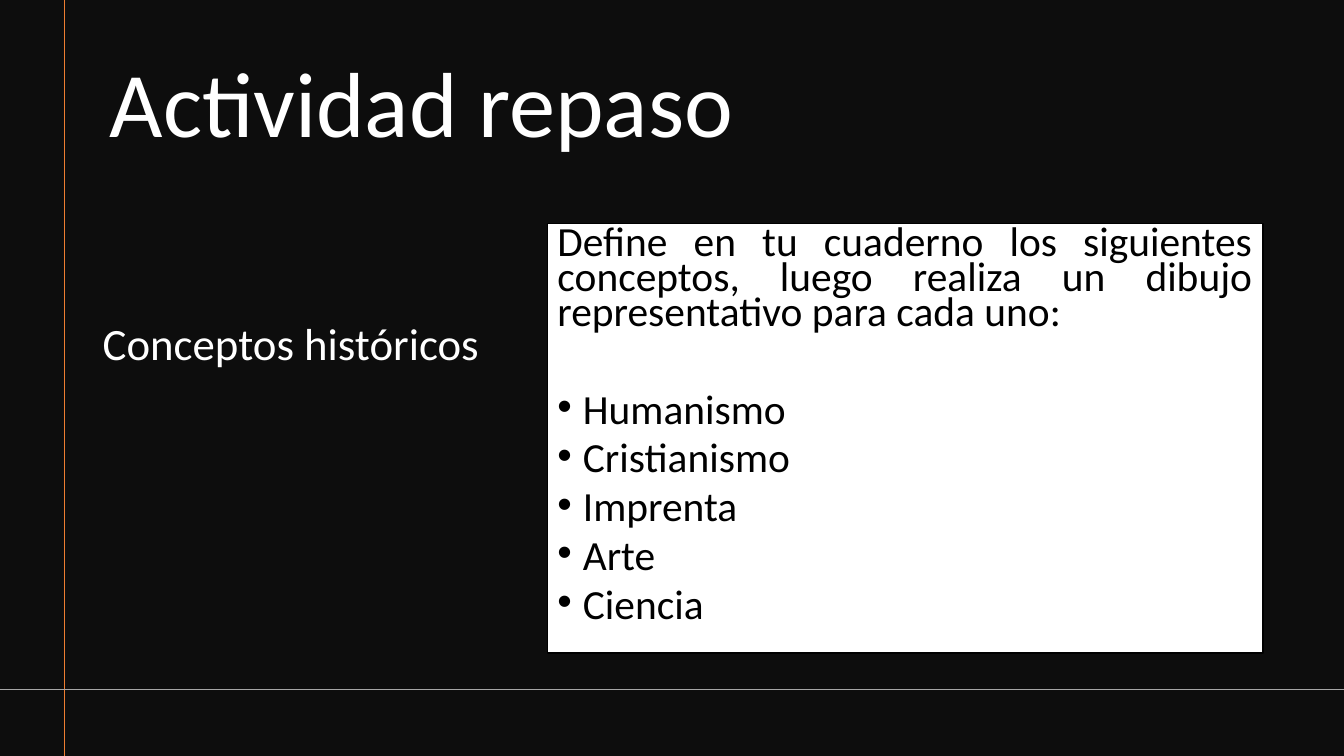
from lxml.etree import SubElement
from pptx import Presentation
from pptx.dml.color import RGBColor
from pptx.enum.shapes import MSO_CONNECTOR, MSO_SHAPE
from pptx.enum.text import MSO_ANCHOR, MSO_AUTO_SIZE, PP_ALIGN
from pptx.oxml.ns import qn
from pptx.util import Cm, Pt

WIDTH, HEIGHT = Cm(33.87), Cm(19.05)
FONT = "Calibri"
NIGHT = RGBColor(0x0D, 0x0D, 0x0D)
WHITE = RGBColor(0xFF, 0xFF, 0xFF)
BLACK = RGBColor(0, 0, 0)
ORANGE = RGBColor(0xED, 0x7D, 0x31)
GREY = RGBColor(0xA6, 0xA6, 0xA6)
TASK = ("Define en tu cuaderno los siguientes conceptos, luego realiza "
        "un dibujo representativo para cada uno:")
TERMS = ["Humanismo", "Cristianismo", "Imprenta", "Arte", "Ciencia"]


def style(para, size, color, align=PP_ALIGN.LEFT, spacing=0.9, before=0):
    para.alignment = align
    para.line_spacing = spacing
    para.space_before = Pt(before)
    para.font.name = FONT
    para.font.size = Pt(size)
    para.font.color.rgb = color


def bullet(para):
    props = para._p.get_or_add_pPr()
    props.set("marL", str(Cm(0.64)))
    props.set("indent", str(-Cm(0.64)))
    SubElement(props, qn("a:buFont"), typeface="Arial")
    SubElement(props, qn("a:buChar"), char="•")


def add_title(slide, text):
    title = slide.shapes.title
    title.left, title.top = Cm(2.51), Cm(1.04)
    title.width, title.height = Cm(16.87), Cm(3.05)
    frame = title.text_frame
    frame.text = text
    frame.auto_size = MSO_AUTO_SIZE.NONE
    frame.vertical_anchor = MSO_ANCHOR.BOTTOM
    style(frame.paragraphs[0], 66, WHITE)


def add_label(slide, text):
    box = slide.shapes.add_textbox(Cm(2.34), Cm(7.98), Cm(10.06), Cm(1.55))
    frame = box.text_frame
    frame.word_wrap = True
    frame.text = text
    style(frame.paragraphs[0], 32, WHITE, before=10)


def add_rule(slide, start, end, color):
    line = slide.shapes.add_connector(MSO_CONNECTOR.STRAIGHT, *start, *end)
    line.line.color.rgb = color
    line.line.width = Pt(1)
    SubElement(line._element.spPr, qn("a:effectLst"))


def add_panel(slide, task, terms):
    panel = slide.shapes.add_shape(
        MSO_SHAPE.RECTANGLE, Cm(13.8), Cm(5.64), Cm(18.03), Cm(10.82))
    panel.shadow.inherit = False
    panel.fill.solid()
    panel.fill.fore_color.rgb = WHITE
    panel.line.color.rgb = BLACK
    panel.line.width = Pt(1)
    frame = panel.text_frame
    frame.word_wrap = True
    frame.vertical_anchor = MSO_ANCHOR.TOP
    frame.text = "\n".join([task, *terms])
    for index, para in enumerate(frame.paragraphs):
        before = 45 if index == 1 else 10
        style(para, 29.6, BLACK, PP_ALIGN.JUSTIFY, 0.7, before)
        if index:
            bullet(para)


def main():
    deck = Presentation()
    deck.slide_width, deck.slide_height = WIDTH, HEIGHT
    slide = deck.slides.add_slide(deck.slide_layouts[5])
    slide.background.fill.solid()
    slide.background.fill.fore_color.rgb = NIGHT
    add_title(slide, "Actividad repaso")
    add_label(slide, "Conceptos históricos")
    add_rule(slide, (Cm(1.63), 0), (Cm(1.63), HEIGHT), ORANGE)
    add_rule(slide, (WIDTH, Cm(17.37)), (0, Cm(17.37)), GREY)
    add_panel(slide, TASK, TERMS)
    deck.save("out.pptx")


if __name__ == "__main__":
    main()
